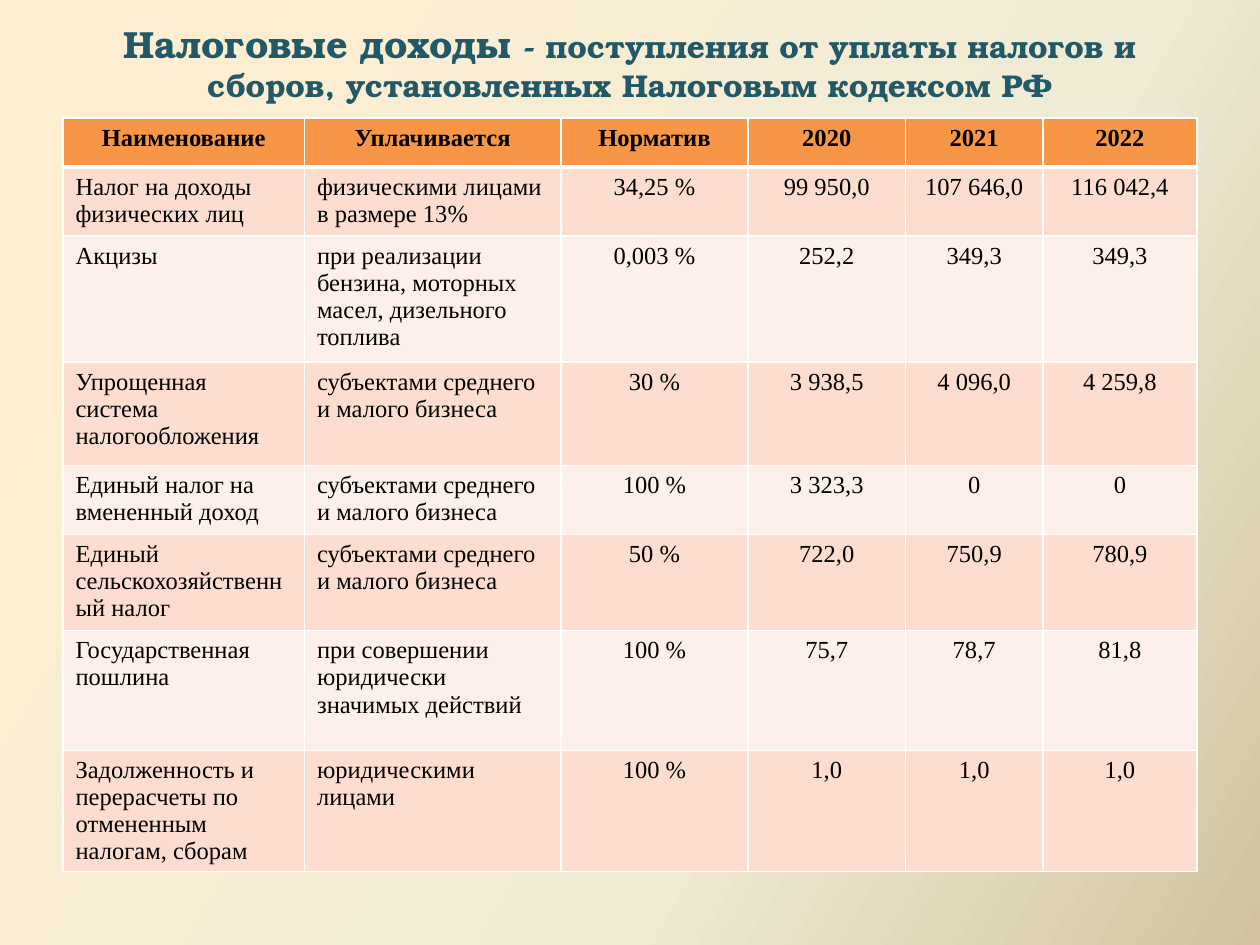
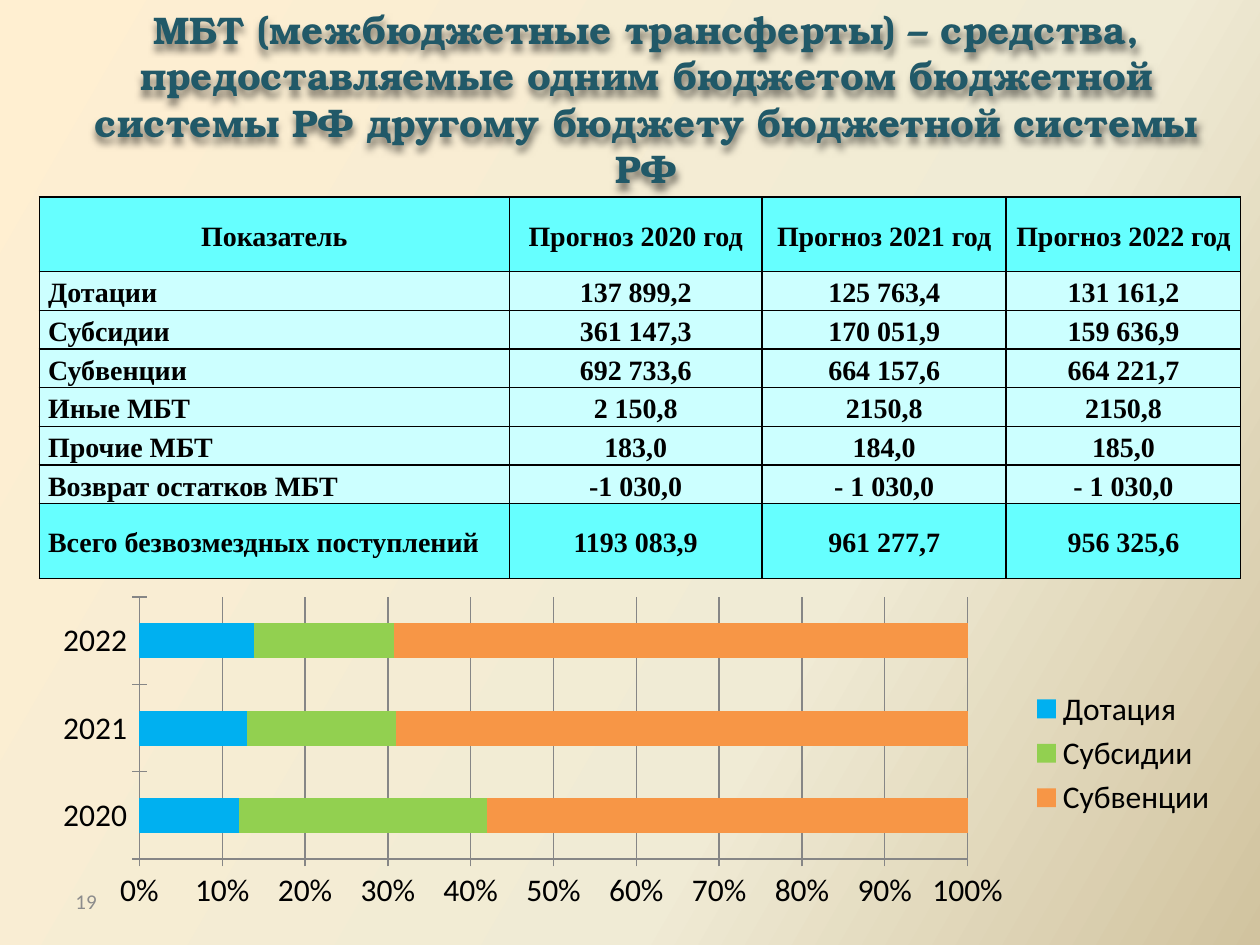
from lxml import etree
from pptx import Presentation
from pptx import oxml
from pptx import util as u
from pptx.chart import data as chart_data
from pptx.dml.color import RGBColor
from pptx.enum import chart as ch
from pptx.enum import text as t
from pptx.oxml import ns

Pt = u.Pt
TEAL = RGBColor(0x21, 0x59, 0x68)
BLACK = RGBColor(0, 0, 0)
WHITE = RGBColor(255, 255, 255)
GRAY = RGBColor(0x8C, 0x8C, 0x8C)
AXIS_GRAY = RGBColor(0x86, 0x86, 0x86)
ORANGE = RGBColor(0xF7, 0x96, 0x46)
PEACH = RGBColor(0xFC, 0xDD, 0xCF)
PALE_PEACH = RGBColor(0xFD, 0xEF, 0xE9)
CYAN = RGBColor(0x66, 0xFF, 0xFF)
PALE_CYAN = RGBColor(0xCC, 0xFF, 0xFF)
BLUE = RGBColor(0x00, 0xB0, 0xF0)
GREEN = RGBColor(0x92, 0xD0, 0x50)
BACKGROUND_STOPS = [
    (0, RGBColor(0xFF, 0xEF, 0xD1)),
    (65, RGBColor(0xF0, 0xEB, 0xD5)),
    (100, RGBColor(0xD1, 0xC3, 0x9F)),
]
TITLE_FONT = "TeX Gyre Bonum"
TABLE_FONT = "Times New Roman"
BODY_FONT = "Calibri"
CENTER, LEFT = t.PP_ALIGN.CENTER, t.PP_ALIGN.LEFT
MIDDLE, TOP = t.MSO_ANCHOR.MIDDLE, t.MSO_ANCHOR.TOP


class Deck:
    def __init__(self):
        self.prs = Presentation()
        self.prs.slide_width, self.prs.slide_height = Pt(720), Pt(540)
        self.slide = None
        self.paint_background()

    def paint_background(self):
        master = self.prs.slide_master
        master.background.fill.gradient()
        old = master.element.find(".//" + ns.qn("p:bgPr") + "/" + ns.qn("a:gradFill"))
        stops = "".join(
            f'<a:gs pos="{pos * 1000}"><a:srgbClr val="{color}"/></a:gs>'
            for pos, color in BACKGROUND_STOPS)
        old.getparent().replace(old, oxml.parse_xml(
            f'<a:gradFill {ns.nsdecls("a")} rotWithShape="1"><a:gsLst>{stops}</a:gsLst>'
            '<a:lin ang="1800000" scaled="0"/></a:gradFill>'))

    def new_slide(self):
        self.slide = self.prs.slides.add_slide(self.prs.slide_layouts[5])

    def style(self, font, name, size, color, bold=False):
        font.name, font.size, font.bold = name, Pt(size), bold
        font.color.rgb = color

    def title(self, box, parts, anchor, bottom_inset=3.6, shadow=False):
        title = self.slide.shapes.title
        title.left, title.top, title.width, title.height = map(Pt, box)
        frame = title.text_frame
        frame.word_wrap = True
        frame.auto_size = t.MSO_AUTO_SIZE.NONE
        frame.vertical_anchor = anchor
        frame.margin_bottom = Pt(bottom_inset)
        paragraph = frame.paragraphs[0]
        paragraph.alignment = CENTER
        paragraph.space_before = Pt(0)
        for words, size in parts:
            run = paragraph.add_run()
            run.text = words
            self.style(run.font, TITLE_FONT, size, TEAL, True)
        if shadow:
            title.element.spPr.append(oxml.parse_xml(
                f'<a:effectLst {ns.nsdecls("a")}>'
                '<a:outerShdw blurRad="50800" dist="38100" dir="5400000" algn="t" rotWithShape="0">'
                '<a:srgbClr val="000000"><a:alpha val="50000"/></a:srgbClr>'
                '</a:outerShdw></a:effectLst>'))

    def label(self, box, words, size, color):
        shape = self.slide.shapes.add_textbox(*map(Pt, box))
        shape.text_frame.word_wrap = True
        shape.text_frame.vertical_anchor = MIDDLE
        paragraph = shape.text_frame.paragraphs[0]
        paragraph.text = words
        self.style(paragraph.font, BODY_FONT, size, color)

    def borders(self, cell, color, top=1, bottom=1):
        tc_pr = cell._tc.get_or_add_tcPr()
        for index, (side, width) in enumerate(
                [("L", 1), ("R", 1), ("T", top), ("B", bottom)]):
            line = etree.Element(ns.qn(f"a:ln{side}"), w=str(Pt(width)))
            solid = etree.SubElement(line, ns.qn("a:solidFill"))
            etree.SubElement(solid, ns.qn("a:srgbClr"), val=str(color))
            tc_pr.insert(index, line)

    def table(self, left, top, widths, heights, rows, fills, size, border,
              bold_rows, left_columns, header_rule=1, anchor=TOP,
              insets=None, line_spacing=None):
        table = self.slide.shapes.add_table(
            len(rows), len(widths), Pt(left), Pt(top),
            Pt(sum(widths)), Pt(sum(heights))).table
        table.horz_banding = table.first_row = False
        for column, width in zip(table.columns, widths):
            column.width = Pt(width)
        for r, (values, height, fill) in enumerate(zip(rows, heights, fills)):
            table.rows[r].height = Pt(height)
            for c, value in enumerate(values):
                cell = table.cell(r, c)
                cell.fill.solid()
                cell.fill.fore_color.rgb = fill
                self.borders(cell, border, header_rule if r == 1 else 1,
                             header_rule if r == 0 else 1)
                cell.vertical_anchor = anchor
                if insets:
                    cell.margin_left = cell.margin_right = Pt(insets[0])
                    cell.margin_top = cell.margin_bottom = Pt(insets[1])
                paragraph = cell.text_frame.paragraphs[0]
                paragraph.text = value
                paragraph.alignment = LEFT if r and c < left_columns else CENTER
                if line_spacing:
                    paragraph.line_spacing = line_spacing
                self.style(paragraph.font, TABLE_FONT, size, BLACK, r in bold_rows)

    def share_chart(self, box, categories, series):
        shares = chart_data.CategoryChartData()
        shares.categories = categories
        for name, values, _ in series:
            shares.add_series(name, values)
        chart = self.slide.shapes.add_chart(
            ch.XL_CHART_TYPE.BAR_STACKED_100, *map(Pt, box), shares).chart
        self.style(chart.font, BODY_FONT, 18, BLACK)
        chart.has_title = False
        chart.has_legend = True
        chart.legend.position = ch.XL_LEGEND_POSITION.RIGHT
        chart.legend.include_in_layout = False
        plot = chart.plots[0]
        plot.vary_by_categories = False
        plot.gap_width, plot.overlap = 150, 100
        for bar, (_, _, color) in zip(plot.series, series):
            bar.format.fill.solid()
            bar.format.fill.fore_color.rgb = color
        value_axis = chart.value_axis
        value_axis.has_major_gridlines = True
        value_axis.major_gridlines.format.line.color.rgb = AXIS_GRAY
        value_axis.tick_labels.number_format = "0%"
        value_axis.tick_labels.number_format_is_linked = False
        for axis in (chart.category_axis, value_axis):
            axis.format.line.color.rgb = AXIS_GRAY
            axis.major_tick_mark = ch.XL_TICK_MARK.CROSS


TAX_ROWS = [
    ("Наименование", "Уплачивается", "Норматив", "2020", "2021", "2022"),
    ("Налог на доходы физических лиц", "физическими лицами в размере 13%",
     "34,25 %", "99 950,0", "107 646,0", "116 042,4"),
    ("Акцизы", "при реализации бензина, моторных масел, дизельного топлива",
     "0,003 %", "252,2", "349,3", "349,3"),
    ("Упрощенная система налогообложения", "субъектами среднего и малого бизнеса",
     "30 %", "3 938,5", "4 096,0", "4 259,8"),
    ("Единый налог на вмененный доход", "субъектами среднего и малого бизнеса",
     "100 %", "3 323,3", "0", "0"),
    ("Единый сельскохозяйственный налог", "субъектами среднего и малого бизнеса",
     "50 %", "722,0", "750,9", "780,9"),
    ("Государственная пошлина", "при совершении юридически значимых действий",
     "100 %", "75,7", "78,7", "81,8"),
    ("Задолженность и перерасчеты по отмененным налогам, сборам",
     "юридическими лицами", "100 %", "1,0", "1,0", "1,0"),
]
TRANSFER_ROWS = [
    ("Показатель", "Прогноз 2020 год", "Прогноз 2021 год", "Прогноз 2022 год"),
    ("Дотации", "137 899,2", "125 763,4", "131 161,2"),
    ("Субсидии", "361 147,3", "170 051,9", "159 636,9"),
    ("Субвенции", "692 733,6", "664 157,6", "664 221,7"),
    ("Иные МБТ", "2 150,8", "2150,8", "2150,8"),
    ("Прочие МБТ", "183,0", "184,0", "185,0"),
    ("Возврат остатков МБТ", "-1 030,0", "- 1 030,0", "- 1 030,0"),
    ("Всего безвозмездных поступлений", "1193 083,9", "961 277,7", "956 325,6"),
]
TRANSFER_SHARES = [
    ("Дотация", (12, 13, 14), BLUE),
    ("Субсидии", (30, 18, 17), GREEN),
    ("Субвенции", (58, 69, 70), ORANGE),
]


def tax_slide(deck):
    deck.new_slide()
    deck.title((36, 21.6, 648, 46), [
        ("Налоговые доходы ", 21.6),
        ("- поступления от уплаты налогов и сборов, установленных Налоговым кодексом РФ", 18),
    ], MIDDLE, bottom_inset=22)
    deck.table(
        36, 67.5, (138, 146.5, 107, 90, 78.5, 88),
        (28, 39.5, 72, 59, 39.5, 55, 68.5, 68.5), TAX_ROWS,
        [ORANGE] + [PEACH, PALE_PEACH] * 3 + [PEACH], 14, WHITE,
        bold_rows=(0,), left_columns=2, header_rule=3)


def transfer_slide(deck):
    deck.new_slide()
    deck.title((44, 0, 651, 114), [
        ("МБТ (межбюджетные трансферты) – средства, предоставляемые одним бюджетом "
         "бюджетной системы РФ другому бюджету бюджетной системы РФ", 22),
    ], TOP, shadow=True)
    deck.label((36, 500.5, 168, 28.75), "19", 12, GRAY)
    deck.table(
        22.5, 112.5, (268.5, 144.5, 139.5, 134), [42.75] + [22] * 6 + [42.75],
        TRANSFER_ROWS, [CYAN] + [PALE_CYAN] * 6 + [CYAN], 16, BLACK,
        bold_rows=range(8), left_columns=1, anchor=MIDDLE,
        insets=(5, 0), line_spacing=1.15)
    deck.share_chart((22.5, 337.5, 680.5, 186), ("2020", "2021", "2022"), TRANSFER_SHARES)


def main():
    deck = Deck()
    tax_slide(deck)
    transfer_slide(deck)
    deck.prs.save("out.pptx")


if __name__ == "__main__":
    main()
